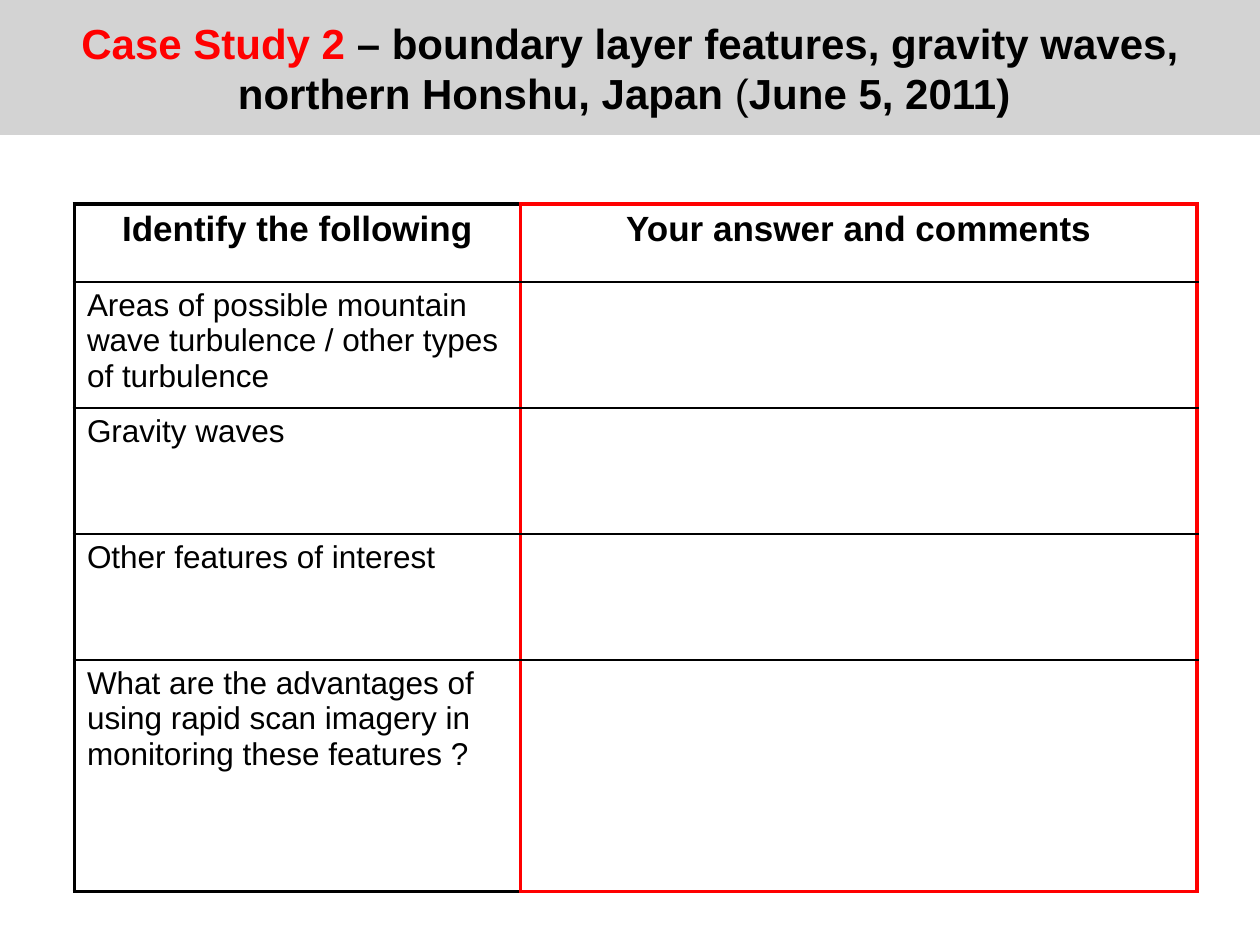
from lxml import etree
from pptx import Presentation
from pptx.dml.color import RGBColor
from pptx.enum.text import MSO_ANCHOR, MSO_AUTO_SIZE, PP_ALIGN
from pptx.oxml.ns import qn
from pptx.util import Cm, Pt

CENTER, LEFT = PP_ALIGN.CENTER, PP_ALIGN.LEFT
TOP, MIDDLE = MSO_ANCHOR.TOP, MSO_ANCHOR.MIDDLE
TITLE_ONLY = 5
FONT = "Arial"
BLACK, RED, BAND_GRAY = "000000", "FF0000", "C0C0C0"
THIN, THICK = 1, 2.25

# Content: (text, colour, bold) runs, then the table
TITLE = [
    ("Case Study 2 ", RED, True),
    ("– boundary layer features, gravity waves, northern Honshu, Japan", BLACK, True),
    (" (", BLACK, False),
    ("June 5, 2011) ", BLACK, True),
]
HEADINGS = ["Identify the following", "Your answer and comments"]
QUESTIONS = [
    "Areas of possible mountain wave turbulence / other types of turbulence",
    "Gravity waves",
    "Other features of interest",
    "What are the advantages of using rapid scan imagery in monitoring these features ?",
]

# Layout in centimetres
SLIDE_SIZE = (25.4, 19.05)
TITLE_HEIGHT = 2.72
TABLE_LEFT, TABLE_TOP = 1.5, 4.11
COLUMN_WIDTHS = [8.99, 13.64]
ROW_HEIGHTS = [1.57, 2.54, 2.54, 2.54, 4.67]


def rgb(hex_color):
    return RGBColor.from_string(hex_color)


def add_run(paragraph, text, size, color=BLACK, bold=False):
    run = paragraph.add_run()
    run.text = text
    run.font.name = FONT
    run.font.size = Pt(size)
    run.font.bold = bold
    run.font.color.rgb = rgb(color)


def set_borders(cell, borders):
    """Draw (colour, width) borders in the order left, right, top, bottom."""
    properties = cell._tc.get_or_add_tcPr()
    for position, (side, (color, width)) in enumerate(zip("LRTB", borders)):
        line = etree.Element(qn(f"a:ln{side}"), w=str(Pt(width)))
        fill = etree.SubElement(line, qn("a:solidFill"))
        etree.SubElement(fill, qn("a:srgbClr"), val=color)
        properties.insert(position, line)


prs = Presentation()
prs.slide_width, prs.slide_height = (Cm(side) for side in SLIDE_SIZE)
slide = prs.slides.add_slide(prs.slide_layouts[TITLE_ONLY])

# Title on a translucent gray band
title = slide.shapes.title
title.left, title.top = Cm(0), Cm(0)
title.width, title.height = Cm(SLIDE_SIZE[0]), Cm(TITLE_HEIGHT)
title.fill.solid()
title.fill.fore_color.rgb = rgb(BAND_GRAY)
band_color = title.fill._xPr.find(".//" + qn("a:srgbClr"))
etree.SubElement(band_color, qn("a:alpha"), val="69000")
title.text_frame.auto_size = MSO_AUTO_SIZE.NONE
title.text_frame.word_wrap = True
title.text_frame.vertical_anchor = MIDDLE
heading = title.text_frame.paragraphs[0]
heading.alignment = CENTER
for text, color, bold in TITLE:
    add_run(heading, text, 24, color, bold)

# Worksheet table: questions in a black frame, answers in a red one
rows = [HEADINGS] + [[question, ""] for question in QUESTIONS]
last_row = len(rows) - 1
worksheet = slide.shapes.add_table(
    len(rows), len(HEADINGS), Cm(TABLE_LEFT), Cm(TABLE_TOP),
    Cm(sum(COLUMN_WIDTHS)), Cm(sum(ROW_HEIGHTS))).table
worksheet.first_row = worksheet.horz_banding = False
for column, width in zip(worksheet.columns, COLUMN_WIDTHS):
    column.width = Cm(width)
for row, height in zip(worksheet.rows, ROW_HEIGHTS):
    row.height = Cm(height)

for row_index, row in enumerate(rows):
    is_header = row_index == 0
    for column_index, text in enumerate(row):
        cell = worksheet.cell(row_index, column_index)
        cell.fill.background()
        cell.vertical_anchor = TOP
        frame = (RED if column_index else BLACK, THICK)
        inner = (BLACK, THIN)
        set_borders(cell, [
            frame,
            (RED, THICK),
            frame if is_header else inner,
            frame if row_index == last_row else inner,
        ])
        if text:
            paragraph = cell.text_frame.paragraphs[0]
            paragraph.alignment = CENTER if is_header else LEFT
            add_run(paragraph, text, 20 if is_header else 18, bold=is_header)

prs.save("out.pptx")
